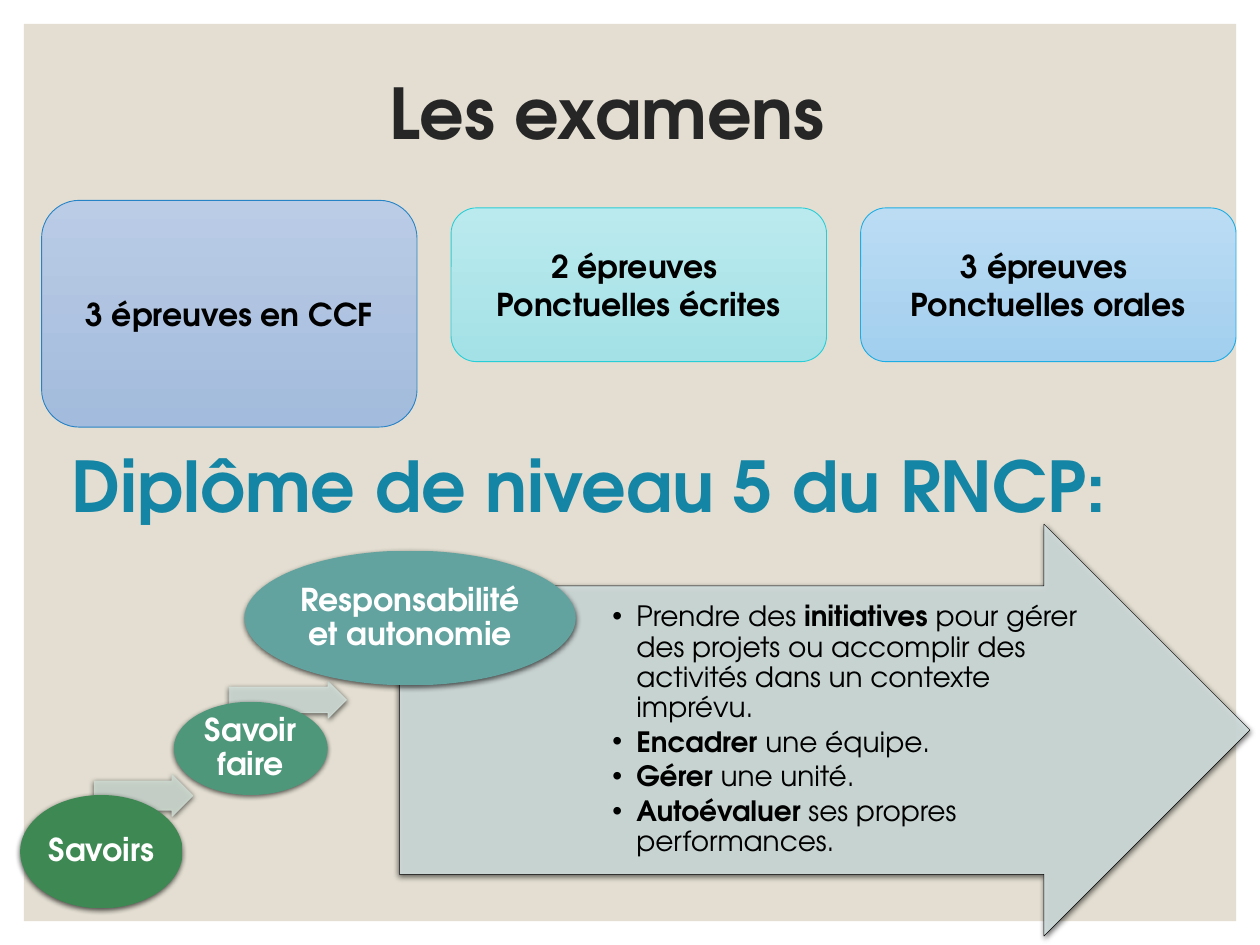
from lxml.etree import SubElement
from pptx import Presentation
from pptx.dml.color import RGBColor
from pptx.enum.shapes import MSO_SHAPE
from pptx.enum.text import MSO_ANCHOR, PP_ALIGN
from pptx.oxml.ns import qn
from pptx.util import Inches, Pt

FONT = "TeX Gyre Adventor"

EXAMS = [
    ((0.33, 1.59, 2.98, 1.8), ["3 épreuves en CCF"], ("BACCE6", "A3BBDC"), "2683C6"),
    ((3.58, 1.65, 2.98, 1.22), ["2 épreuves ", "Ponctuelles écrites"],
     ("BBEAEE", "A3E1E6"), "27CED7"),
    ((6.83, 1.65, 2.98, 1.22), ["3 épreuves ", "Ponctuelles orales"],
     ("BCDCF4", "A2CFEE"), "1CADE4"),
]

# Each step: arrow box, arrow fill, arrow line, line width, oval box, oval fill, label
STEPS = [
    ((0.75, 6.15, 0.78, 0.33), "CEDAD1", "CEDAD1", 0.5,
     (0.16, 6.31, 1.29, 0.9), ("3E8853", "3C8951"), "Savoirs"),
    ((1.82, 5.41, 0.93, 0.29), "D1DDD7", "D1DDD7", 0.5,
     (1.38, 5.57, 1.22, 0.74), ("4E977B", "4C987A"), "Savoir faire"),
    ((3.17, 4.16, 6.75, 3.27), "D3E0DF", "000000", 0.25,
     (1.94, 4.37, 2.63, 1.07), ("62A39F", "60A39F"), "Responsabilité et autonomie"),
]

# Runs alternate between regular and bold, starting with regular
DUTIES = [
    ["Prendre des ", "initiatives ",
     "pour gérer des projets ou accomplir des activités dans un contexte imprévu."],
    ["", "Encadrer ", "une équipe."],
    ["", "Gérer", " une unité."],
    ["", "Autoévaluer", " ses propres performances."],
]


def color(code):
    return RGBColor.from_string(code)


def style(item, **values):
    for name, value in values.items():
        setattr(item, name, value)


def write(para, text, size, code, bold=True):
    run = para.add_run()
    run.text = text
    style(run.font, name=FONT, size=Pt(size), bold=bold)
    run.font.color.rgb = color(code)


def inset(frame, gap):
    for side in ("left", "top", "right", "bottom"):
        setattr(frame, "margin_" + side, Inches(gap))


def add_shape(slide, kind, box, fill, line=None, width=0.5):
    """Add a shape with a plain fill, or a top-to-bottom gradient for a pair."""
    shape = slide.shapes.add_shape(kind, *map(Inches, box))
    shape.shadow.inherit = False
    if isinstance(fill, str):
        shape.fill.solid()
        shape.fill.fore_color.rgb = color(fill)
    else:
        shape.fill.gradient()
        shape.fill.gradient_angle = 270
        for stop, code in zip(shape.fill.gradient_stops, fill):
            stop.color.rgb = color(code)
    if line:
        shape.line.color.rgb = color(line)
        shape.line.width = Pt(width)
    else:
        shape.line.fill.background()
    return shape


def add_alpha(node, percent):
    SubElement(node, qn("a:alpha"), val=str(percent * 1000))


def add_shadow(shape):
    effects = shape.element.spPr.find(qn("a:effectLst"))
    outer = SubElement(effects, qn("a:outerShdw"), blurRad=str(Pt(3)),
                       dist=str(Pt(1)), dir="5400000", rotWithShape="0")
    add_alpha(SubElement(outer, qn("a:srgbClr"), val="000000"), 63)


def add_text(slide, box):
    frame = slide.shapes.add_textbox(*map(Inches, box)).text_frame
    frame.word_wrap = True
    return frame


def add_heading(slide, box, text, code, anchor):
    frame = add_text(slide, box)
    frame.vertical_anchor = anchor
    write(frame.paragraphs[0], text, 40, code)


def add_exam(slide, box, lines, fill, line):
    frame = add_shape(slide, MSO_SHAPE.ROUNDED_RECTANGLE, box, fill, line).text_frame
    style(frame, word_wrap=True, vertical_anchor=MSO_ANCHOR.MIDDLE)
    for i, text in enumerate(lines):
        para = frame.add_paragraph() if i else frame.paragraphs[0]
        para.alignment = PP_ALIGN.CENTER
        write(para, text, 18, "000000")


def add_arrow(slide, box, fill, line, width):
    arrow = add_shape(slide, MSO_SHAPE.RIGHT_ARROW, box, fill, line, width)
    arrow.adjustments[0] = 0.7
    arrow.adjustments[1] = 0.5
    add_alpha(arrow.element.spPr.find(qn("a:solidFill"))[0], 90)
    if line == fill:
        add_alpha(arrow.line.fill._xPr.find(qn("a:solidFill"))[0], 90)
    add_shadow(arrow)


def add_oval(slide, box, fill, text):
    oval = add_shape(slide, MSO_SHAPE.OVAL, box, fill)
    add_shadow(oval)
    frame = oval.text_frame
    style(frame, word_wrap=True, vertical_anchor=MSO_ANCHOR.MIDDLE)
    inset(frame, 0.01)
    para = frame.paragraphs[0]
    style(para, alignment=PP_ALIGN.CENTER, line_spacing=0.9)
    write(para, text, 18, "FFFFFF")


def add_duties(slide, box):
    frame = add_text(slide, box)
    frame.vertical_anchor = MSO_ANCHOR.MIDDLE
    inset(frame, 0)
    for i, parts in enumerate(DUTIES):
        para = frame.add_paragraph() if i else frame.paragraphs[0]
        style(para, line_spacing=0.9, space_after=Pt(2.5))
        props = para._p.get_or_add_pPr()
        props.set("marL", str(Inches(0.19)))
        props.set("indent", str(Inches(-0.19)))
        SubElement(props, qn("a:buFont"), typeface="Arial")
        SubElement(props, qn("a:buChar"), char="•")
        for j, text in enumerate(parts):
            if text:
                write(para, text, 16, "000000", bold=j % 2 == 1)


def main():
    deck = Presentation()
    style(deck, slide_width=Inches(10), slide_height=Inches(7.5))
    slide = deck.slides.add_slide(deck.slide_layouts[6])
    add_shape(slide, MSO_SHAPE.RECTANGLE, (0.19, 0.19, 9.62, 7.12), "E3DED1")
    add_heading(slide, (2.99, 0.32, 4.15, 1.13), "Les examens", "262626",
                MSO_ANCHOR.MIDDLE)
    for exam in EXAMS:
        add_exam(slide, *exam)
    add_heading(slide, (0.47, 3.46, 8.54, 1.13), "Diplôme de niveau 5 du RNCP:",
                "1485A4", MSO_ANCHOR.TOP)
    for step in STEPS:
        add_arrow(slide, *step[:4])
        add_oval(slide, *step[4:])
    add_duties(slide, (4.86, 4.65, 3.92, 2.29))
    deck.save("out.pptx")


if __name__ == "__main__":
    main()
